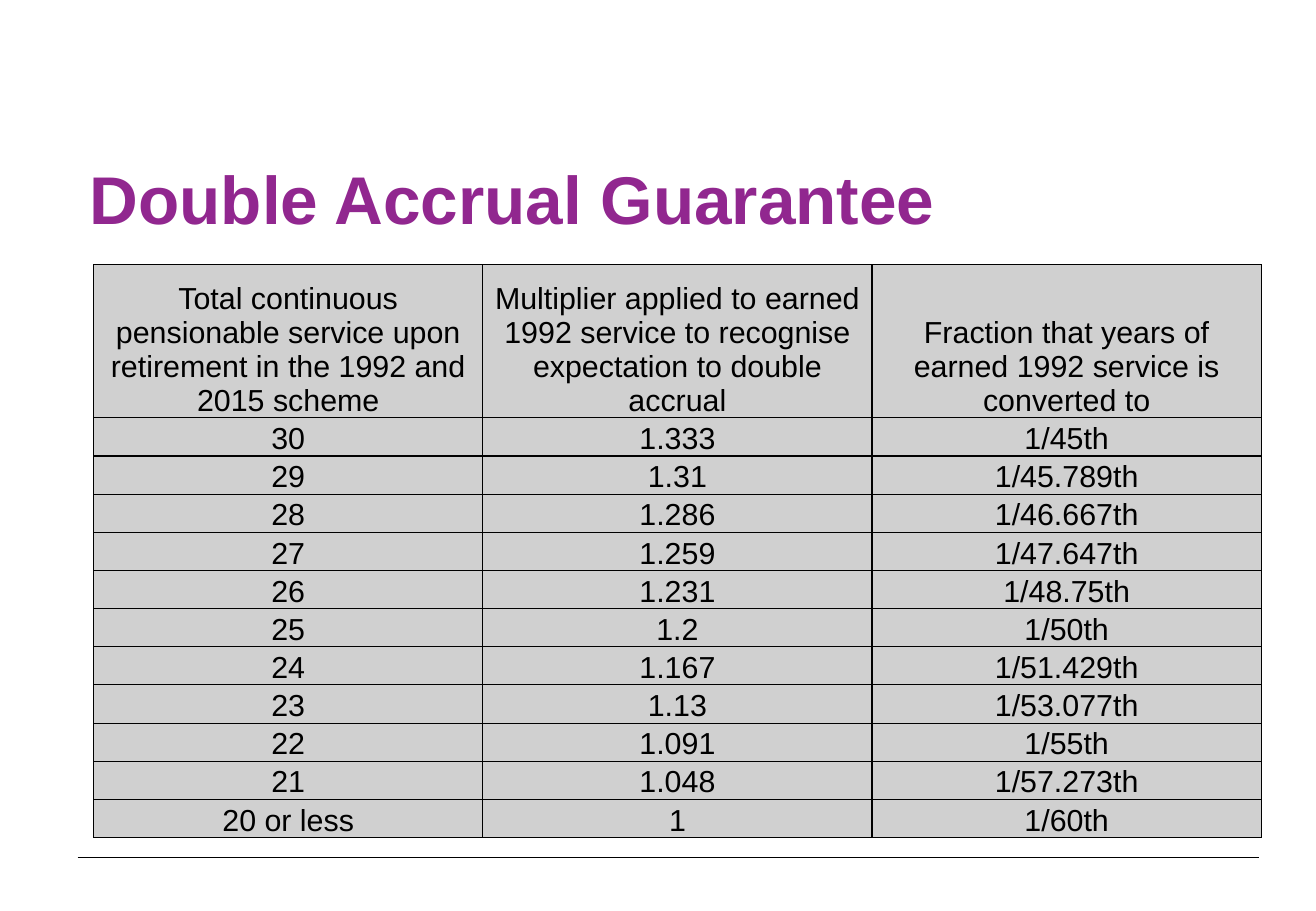
import pptx
import pptx.dml.color
import pptx.enum.shapes
import pptx.enum.text
import pptx.oxml
import pptx.oxml.ns
import pptx.util
from pptx.util import Inches

COLORS = {"title": "91278F", "ink": "000000", "cell": "D0D0D0"}
FONT = "Arial"
HEADER_HEIGHT = 1.26
TABLE_HEIGHT = 4.72

ACCRUAL_ROWS = [
    ("Total continuous pensionable service upon retirement in the 1992 and 2015 scheme",
     "Multiplier applied to earned 1992 service to recognise expectation to double accrual",
     "Fraction that years of earned 1992 service is converted to"),
    ("30", "1.333", "1/45th"),
    ("29", "1.31", "1/45.789th"),
    ("28", "1.286", "1/46.667th"),
    ("27", "1.259", "1/47.647th"),
    ("26", "1.231", "1/48.75th"),
    ("25", "1.2", "1/50th"),
    ("24", "1.167", "1/51.429th"),
    ("23", "1.13", "1/53.077th"),
    ("22", "1.091", "1/55th"),
    ("21", "1.048", "1/57.273th"),
    ("20 or less", "1", "1/60th"),
]


def color(name):
    return pptx.dml.color.RGBColor.from_string(COLORS[name])


def write(frame, text, size, ink, bold, align):
    frame.text = text
    frame.word_wrap = True
    paragraph = frame.paragraphs[0]
    paragraph.alignment = align
    font = paragraph.runs[0].font
    font.name = FONT
    font.size = pptx.util.Pt(size)
    font.bold = bold
    font.color.rgb = color(ink)


def set_title(slide, text):
    title = slide.shapes.title
    title.left, title.top = Inches(0.64), Inches(1.31)
    title.width, title.height = Inches(9.75), Inches(0.63)
    frame = title.text_frame
    write(frame, text, 40, "title", True, pptx.enum.text.PP_ALIGN.LEFT)
    frame.auto_size = pptx.enum.text.MSO_AUTO_SIZE.NONE
    frame.vertical_anchor = pptx.enum.text.MSO_ANCHOR.MIDDLE


def add_footer_rule(slide):
    rule = slide.shapes.add_connector(
        pptx.enum.shapes.MSO_CONNECTOR.STRAIGHT,
        Inches(0.64), Inches(7.06), Inches(10.36), Inches(7.06))
    rule.line.color.rgb = color("ink")
    rule.line.width = pptx.util.Pt(0.75)
    properties = rule._element.spPr
    properties.append(pptx.oxml.parse_xml(
        f'<a:effectLst {pptx.oxml.ns.nsdecls("a")}/>'))


def add_borders(cell):
    properties = cell._tc.get_or_add_tcPr()
    for position, side in enumerate(("lnL", "lnR", "lnT", "lnB")):
        properties.insert(position, pptx.oxml.parse_xml(
            f'<a:{side} {pptx.oxml.ns.nsdecls("a")} w="{pptx.util.Pt(0.75)}">'
            f'<a:solidFill><a:srgbClr val="{COLORS["ink"]}"/></a:solidFill>'
            f'</a:{side}>'))


def format_cell(cell, text):
    write(cell.text_frame, text, 18, "ink", False, pptx.enum.text.PP_ALIGN.CENTER)
    cell.vertical_anchor = pptx.enum.text.MSO_ANCHOR.BOTTOM
    cell.margin_left = cell.margin_right = cell.margin_top = Inches(0.01)
    cell.margin_bottom = 0
    cell.fill.solid()
    cell.fill.fore_color.rgb = color("cell")
    add_borders(cell)


def add_accrual_table(slide):
    table = slide.shapes.add_table(
        len(ACCRUAL_ROWS), len(ACCRUAL_ROWS[0]), Inches(0.77), Inches(2.18),
        Inches(9.61), Inches(TABLE_HEIGHT)).table
    body_height = (TABLE_HEIGHT - HEADER_HEIGHT) / (len(ACCRUAL_ROWS) - 1)
    for index, values in enumerate(ACCRUAL_ROWS):
        table.rows[index].height = Inches(body_height if index else HEADER_HEIGHT)
        for column, text in enumerate(values):
            format_cell(table.cell(index, column), text)


def main():
    deck = pptx.Presentation()
    deck.slide_width, deck.slide_height = Inches(10.83), Inches(7.5)
    slide = deck.slides.add_slide(deck.slide_layouts[5])
    add_footer_rule(slide)
    set_title(slide, "Double Accrual Guarantee")
    add_accrual_table(slide)
    deck.save("out.pptx")


if __name__ == "__main__":
    main()
